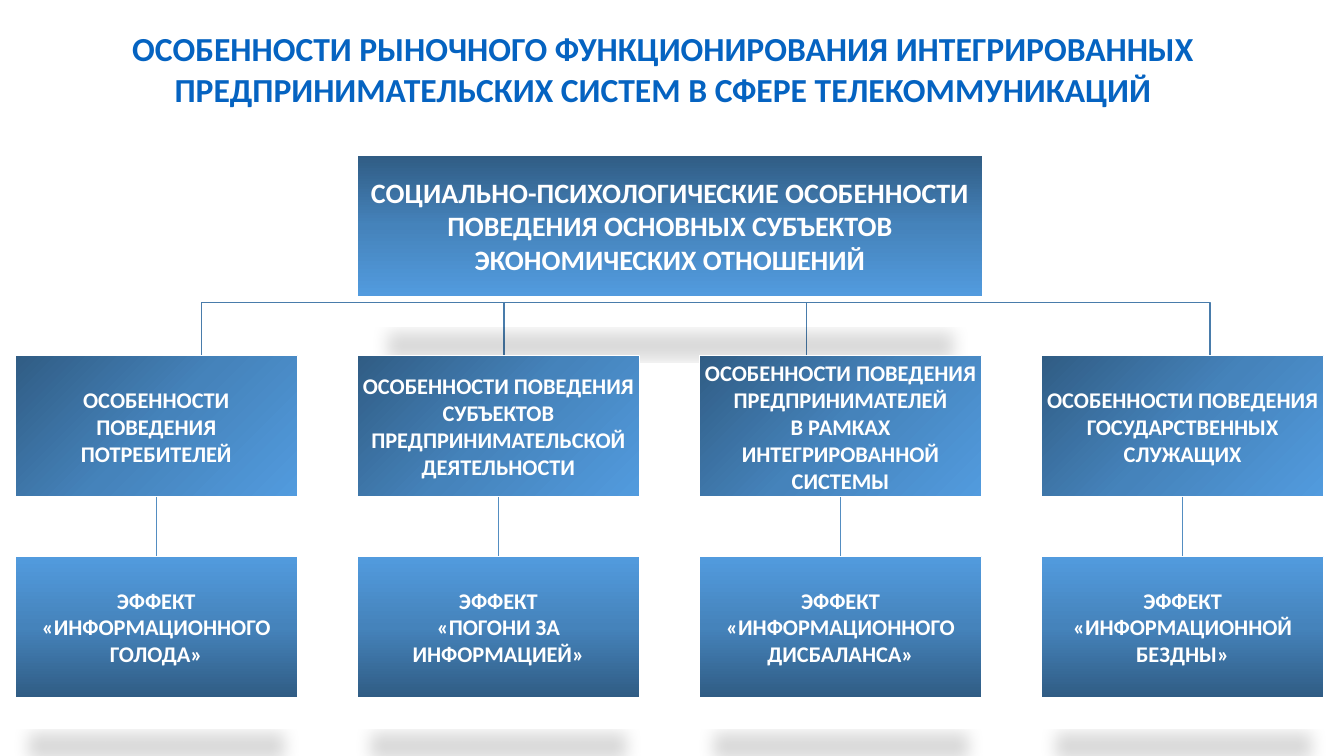
"""Build a slide with a hierarchy of behaviour features and their effects."""
from copy import deepcopy
from dataclasses import dataclass

from lxml.etree import SubElement
from pptx import Presentation
from pptx.dml.color import RGBColor
from pptx.enum.shapes import MSO_CONNECTOR as Connector, MSO_SHAPE as Preset
from pptx.enum.text import MSO_ANCHOR as Anchor, MSO_AUTO_SIZE as AutoSize, PP_ALIGN as Align
from pptx.oxml.ns import qn
from pptx.shapes.autoshape import Shape
from pptx.shapes.shapetree import SlideShapes
from pptx.text.text import TextFrame
from pptx.util import Inches, Pt

COLORS = {
    "title": "0563C1",
    "text": "FFFFFF",
    "border": "FFFFFF",
    "dark": "305C84",
    "middle": "4583BB",
    "light": "529BDE",
    "branch": "497CAB",
    "link": "538DC1",
    "shadow": "000000",
}
TITLE = ("ОСОБЕННОСТИ РЫНОЧНОГО ФУНКЦИОНИРОВАНИЯ ИНТЕГРИРОВАННЫХ "
         "ПРЕДПРИНИМАТЕЛЬСКИХ СИСТЕМ В СФЕРЕ ТЕЛЕКОММУНИКАЦИЙ")
ROOT_TEXT = ("СОЦИАЛЬНО-ПСИХОЛОГИЧЕСКИЕ ОСОБЕННОСТИ ПОВЕДЕНИЯ "
             "ОСНОВНЫХ СУБЪЕКТОВ ЭКОНОМИЧЕСКИХ ОТНОШЕНИЙ")
BOX_WIDTH, BOX_HEIGHT = 2.8, 1.4
FIRST_LEFT, LAST_LEFT = 0.15, 10.33
ROOT_LEFT, ROOT_TOP, ROOT_WIDTH = 3.54, 1.54, 6.21
FEATURE_TOP, EFFECT_TOP = 3.53, 5.52
ROOT_CENTER, ROOT_BOTTOM = ROOT_LEFT + ROOT_WIDTH / 2, ROOT_TOP + BOX_HEIGHT
BRANCH_Y = (ROOT_BOTTOM + FEATURE_TOP) / 2


@dataclass
class Column:
    feature: list[str]
    effect: list[str]


@dataclass
class Style:
    size: int
    gradient_angle: int
    shadow: bool


ROOT_STYLE = Style(20, 270, True)
FEATURE_STYLE = Style(16, 315, False)
EFFECT_STYLE = Style(16, 90, True)
COLUMNS = [
    Column(["ОСОБЕННОСТИ", "ПОВЕДЕНИЯ", "ПОТРЕБИТЕЛЕЙ"],
           ["ЭФФЕКТ", "«ИНФОРМАЦИОННОГО", "ГОЛОДА»"]),
    Column(["ОСОБЕННОСТИ ПОВЕДЕНИЯ", "СУБЪЕКТОВ", "ПРЕДПРИНИМАТЕЛЬСКОЙ", "ДЕЯТЕЛЬНОСТИ"],
           ["ЭФФЕКТ", "«ПОГОНИ ЗА", "ИНФОРМАЦИЕЙ»"]),
    Column(["ОСОБЕННОСТИ ПОВЕДЕНИЯ", "ПРЕДПРИНИМАТЕЛЕЙ", "В РАМКАХ", "ИНТЕГРИРОВАННОЙ", "СИСТЕМЫ"],
           ["ЭФФЕКТ", "«ИНФОРМАЦИОННОГО", "ДИСБАЛАНСА»"]),
    Column(["ОСОБЕННОСТИ ПОВЕДЕНИЯ", "ГОСУДАРСТВЕННЫХ", "СЛУЖАЩИХ"],
           ["ЭФФЕКТ", "«ИНФОРМАЦИОННОЙ", "БЕЗДНЫ»"]),
]


def color(name: str) -> RGBColor:
    return RGBColor.from_string(COLORS[name])


def write_text(frame: TextFrame, lines: list[str], size: int, color_name: str) -> None:
    for index, line in enumerate(lines):
        para = frame.paragraphs[0] if index == 0 else frame.add_paragraph()
        para.alignment = Align.CENTER
        span = para.add_run()
        span.text = line
        span.font.color.rgb = color(color_name)
        for name, value in {"name": "Calibri", "size": Pt(size), "bold": True}.items():
            setattr(span.font, name, value)


def add_gradient(box: Shape, angle: int) -> None:
    box.fill.gradient()
    box.fill.gradient_angle = angle
    stop_list = box.element.spPr.find(qn("a:gradFill")).find(qn("a:gsLst"))
    stop_list.append(deepcopy(stop_list[0]))
    stops = zip(box.fill.gradient_stops, ("dark", "middle", "light"), (0, 0.5, 1))
    for stop, name, position in stops:
        stop.color.rgb = color(name)
        stop.position = position


def add_shadow(box: Shape) -> None:
    effects = box.element.spPr.find(qn("a:effectLst"))
    shadow = SubElement(effects, qn("a:outerShdw"), {
        "blurRad": str(Pt(12)), "dist": str(Pt(25)), "dir": "5400000",
        "sx": "90000", "sy": "-19000", "rotWithShape": "0"})
    shade = SubElement(shadow, qn("a:srgbClr"), val=COLORS["shadow"])
    SubElement(shade, qn("a:alpha"), val="15000")


def add_box(shapes: SlideShapes, left: float, top: float, width: float,
            lines: list[str], style: Style) -> Shape:
    box = shapes.add_shape(Preset.RECTANGLE, Inches(left), Inches(top),
                           Inches(width), Inches(BOX_HEIGHT))
    box.shadow.inherit = False
    add_gradient(box, style.gradient_angle)
    box.line.color.rgb = color("border")
    box.line.width = Pt(1)
    if style.shadow:
        add_shadow(box)
    frame = box.text_frame
    margins = {f"margin_{side}": Inches(0.01) for side in ("left", "top", "right", "bottom")}
    for name, value in {"word_wrap": True, "vertical_anchor": Anchor.MIDDLE, **margins}.items():
        setattr(frame, name, value)
    write_text(frame, lines, style.size, "text")
    return box


def add_branch(shapes: SlideShapes, center: float) -> None:
    builder = shapes.build_freeform(ROOT_CENTER, ROOT_BOTTOM, scale=Inches(1))
    points = [(ROOT_CENTER, BRANCH_Y), (center, BRANCH_Y), (center, FEATURE_TOP)]
    builder.add_line_segments(points, close=False)
    branch = builder.convert_to_shape()
    branch.shadow.inherit = False
    branch.fill.background()
    branch.line.color.rgb = color("branch")
    branch.line.width = Pt(1)


def add_link(shapes: SlideShapes, feature: Shape, effect: Shape) -> None:
    link = shapes.add_connector(Connector.STRAIGHT, 0, 0, 0, 0)
    link.begin_connect(feature, 2)
    link.end_connect(effect, 0)
    link.line.color.rgb = color("link")
    link.line.width = Pt(1)
    SubElement(link.element.spPr, qn("a:effectLst"))


def add_title(shapes: SlideShapes) -> None:
    box = shapes.add_textbox(Inches(0.35), Inches(0.23), Inches(12.45), Inches(0.91))
    box.text_frame.word_wrap = True
    box.text_frame.auto_size = AutoSize.SHAPE_TO_FIT_TEXT
    write_text(box.text_frame, [TITLE], 24, "title")


def main() -> None:
    deck = Presentation()
    deck.slide_width, deck.slide_height = Inches(13.33), Inches(7.5)
    page = deck.slides.add_slide(deck.slide_layouts[6])
    shapes = page.shapes
    add_title(shapes)
    step = (LAST_LEFT - FIRST_LEFT) / (len(COLUMNS) - 1)
    lefts = [FIRST_LEFT + index * step for index in range(len(COLUMNS))]
    for left in lefts:
        add_branch(shapes, left + BOX_WIDTH / 2)
    add_box(shapes, ROOT_LEFT, ROOT_TOP, ROOT_WIDTH, [ROOT_TEXT], ROOT_STYLE)
    for left, column in zip(lefts, COLUMNS):
        feature = add_box(shapes, left, FEATURE_TOP, BOX_WIDTH, column.feature, FEATURE_STYLE)
        effect = add_box(shapes, left, EFFECT_TOP, BOX_WIDTH, column.effect, EFFECT_STYLE)
        add_link(shapes, feature, effect)
    deck.save("out.pptx")


if __name__ == "__main__":
    main()
